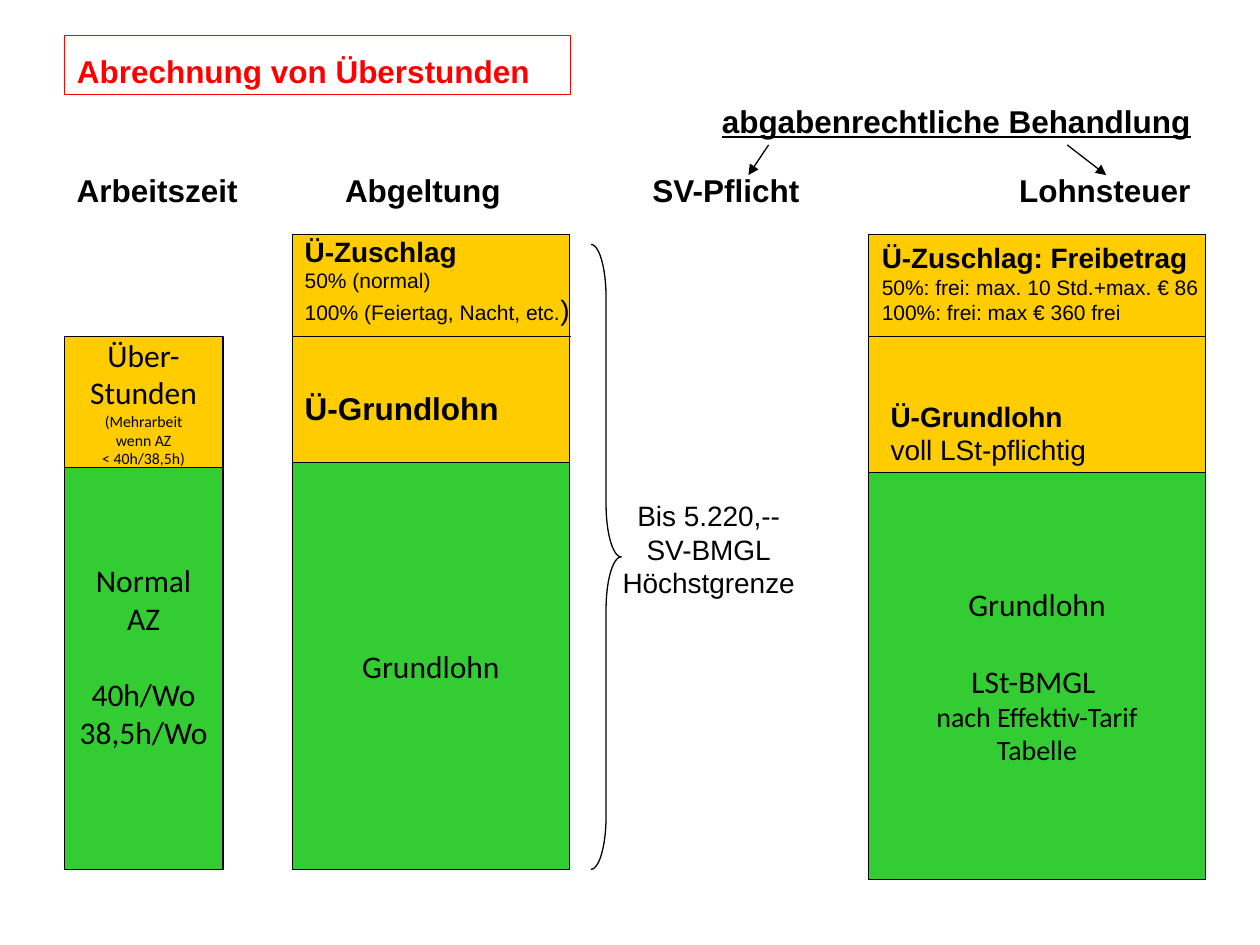
from dataclasses import dataclass
from typing import Optional

from lxml import etree
from pptx import Presentation
from pptx.dml.color import RGBColor
from pptx.enum.shapes import MSO_CONNECTOR as Connector, MSO_SHAPE as Shape
from pptx.enum.text import MSO_ANCHOR as Anchor, MSO_AUTO_SIZE as AutoSize, PP_ALIGN as Align
from pptx.oxml.ns import qn
from pptx.util import Inches, Pt

BLACK, RED, GREEN, GOLD = "000000", "FF0000", "33CC33", "FFCC00"
BLANK_LINE = 22


@dataclass(frozen=True)
class Run:
    text: str
    size: float = 18
    bold: bool = False
    underline: bool = False
    color: str = BLACK


@dataclass(frozen=True)
class Line:
    runs: tuple[Run, ...]
    before: float = 0


@dataclass(frozen=True)
class Area:
    left: float
    top: float
    width: float
    height: float

    def lengths(self):
        return [Inches(v) for v in (self.left, self.top, self.width, self.height)]


@dataclass(frozen=True)
class Block:
    area: Area
    fill: Optional[str] = None
    lines: tuple[Line, ...] = ()
    border: str = BLACK


@dataclass(frozen=True)
class Label:
    area: Area
    lines: tuple[Line, ...]
    wrap: bool = False
    align: Align = Align.LEFT


@dataclass(frozen=True)
class Stroke:
    start: tuple[float, float]
    end: tuple[float, float]
    arrow: bool = False


def line(text: str, size: float = 18, before: float = 0, **style) -> Line:
    return Line((Run(text, size, **style),), before)


def heading(text: str, left: float, top: float, width: float, **style) -> Label:
    return Label(Area(left, top, width, 0.4), (line(text, bold=True, **style),), wrap=True)


def rgb(value: str) -> RGBColor:
    return RGBColor.from_string(value)


def outline(shape, color: str) -> None:
    shape.line.color.rgb = rgb(color)
    shape.line.width = Pt(0.75)


def write(frame, lines: tuple[Line, ...], font: str, align: Align) -> None:
    for index, content in enumerate(lines):
        paragraph = frame.add_paragraph() if index else frame.paragraphs[0]
        paragraph.alignment = align
        paragraph.space_before = Pt(content.before)
        for part in content.runs:
            run = paragraph.add_run()
            run.text = part.text
            run.font.name = font
            run.font.size = Pt(part.size)
            run.font.bold = part.bold
            run.font.underline = part.underline
            run.font.color.rgb = rgb(part.color)


def fill_label(box, label: Label) -> None:
    box.left, box.top, box.width, box.height = label.area.lengths()
    frame = box.text_frame
    frame.word_wrap = label.wrap
    frame.auto_size = AutoSize.SHAPE_TO_FIT_TEXT
    frame.vertical_anchor = Anchor.TOP
    write(frame, label.lines, "Arial", label.align)


def draw_label(slide, label: Label) -> None:
    fill_label(slide.shapes.add_textbox(*label.area.lengths()), label)


def draw_block(slide, block: Block) -> None:
    box = slide.shapes.add_shape(Shape.RECTANGLE, *block.area.lengths())
    box.shadow.inherit = False
    outline(box, block.border)
    if block.fill:
        box.fill.solid()
        box.fill.fore_color.rgb = rgb(block.fill)
    else:
        box.fill.background()
    box.text_frame.word_wrap = False
    box.text_frame.vertical_anchor = Anchor.MIDDLE
    write(box.text_frame, block.lines, "Calibri", Align.CENTER)


def draw_brace(slide, area: Area) -> None:
    brace = slide.shapes.add_shape(Shape.RIGHT_BRACE, *area.lengths())
    brace.shadow.inherit = False
    brace.fill.background()
    outline(brace, BLACK)
    brace.adjustments[0] = 1.75
    brace.adjustments[1] = 0.5


def draw_stroke(slide, stroke: Stroke) -> None:
    ends = [Inches(v) for v in stroke.start + stroke.end]
    connector = slide.shapes.add_connector(Connector.STRAIGHT, *ends)
    outline(connector, BLACK)
    properties = connector._element.spPr
    if stroke.arrow:
        etree.SubElement(properties.find(qn("a:ln")), qn("a:tailEnd"), type="triangle")
    etree.SubElement(properties, qn("a:effectLst"))


WORK, PAY, TAX = 0.51, 2.32, 6.89
SURCHARGE_TOP, OVERTIME_TOP = 1.86, 2.67
HEADING_TOP = 1.31

TITLE = Label(Area(WORK, 0.36, 3.8, 0.4),
              (line("Abrechnung von Überstunden", bold=True, color=RED),))

BLOCKS = [
    Block(Area(WORK, 0.28, 4.02, 0.47), border=RED),
    Block(Area(WORK, 3.51, 1.26, 3.39), GREEN, (
        line("Normal"), line("AZ"),
        line("40h/Wo", before=BLANK_LINE), line("38,5h/Wo"))),
    Block(Area(WORK, OVERTIME_TOP, 1.26, 1.04), GOLD, (
        line("Über-"), line("Stunden"), line("(Mehrarbeit", 9),
        line("wenn AZ", 9), line("< 40h/38,5h)", 9))),
    Block(Area(PAY, 3.67, 2.2, 3.23), GREEN, (line("Grundlohn"),)),
    Block(Area(PAY, SURCHARGE_TOP, 2.2, 1.81), GOLD),
    Block(Area(TAX, 3.75, 2.68, 3.23), GREEN, (
        line("Grundlohn"), line("LSt-BMGL ", before=BLANK_LINE),
        line("nach Effektiv-Tarif", 16), line("Tabelle", 16))),
    Block(Area(TAX, SURCHARGE_TOP, 2.68, 1.89), GOLD),
]

LABELS = [
    heading("Arbeitszeit", WORK, HEADING_TOP, 1.48),
    heading("Abgeltung", 2.64, HEADING_TOP, 1.5),
    heading("SV-Pflicht", 5.08, HEADING_TOP, 1.5),
    heading("Lohnsteuer", 7.99, HEADING_TOP, 1.77),
    heading("abgabenrechtliche Behandlung", 5.63, 0.76, 4.02, underline=True),
    Label(Area(PAY, 1.81, 2.33, 0.84), (
        line("Ü-Zuschlag", 16, bold=True), line("50% (normal)", 12),
        Line((Run("100% (Feiertag, Nacht, etc.", 12), Run(")", 16))))),
    Label(Area(PAY, 3.04, 1.74, 0.4), (line("Ü-Grundlohn", bold=True),)),
    Label(Area(4.84, 3.91, 1.57, 0.9), (
        line("Bis 5.220,--", 16), line("SV-BMGL", 16),
        line("Höchstgrenze", 16)), align=Align.CENTER),
    Label(Area(6.9, SURCHARGE_TOP, 2.77, 0.77), (
        line("Ü-Zuschlag: Freibetrag", 16, bold=True),
        line("50%: frei: max. 10 Std.+max. € 86", 12),
        line("100%: frei: max € 360 frei", 12))),
    Label(Area(6.97, 3.12, 1.76, 0.64), (
        line("Ü-Grundlohn", 16, bold=True), line("voll LSt-pflichtig", 16))),
]

STROKES = [
    Stroke((PAY, OVERTIME_TOP), (4.53, OVERTIME_TOP)),
    Stroke((TAX, OVERTIME_TOP), (9.57, OVERTIME_TOP)),
    Stroke((6.1, 1.15), (5.94, 1.39), arrow=True),
    Stroke((8.47, 1.15), (8.78, 1.39), arrow=True),
]


def main() -> None:
    deck = Presentation()
    deck.slide_width, deck.slide_height = Inches(10), Inches(7.5)
    slide = deck.slides.add_slide(deck.slide_layouts[5])
    fill_label(slide.shapes.title, TITLE)
    for block in BLOCKS:
        draw_block(slide, block)
    draw_brace(slide, Area(4.69, 1.94, 0.24, 4.96))
    for stroke in STROKES:
        draw_stroke(slide, stroke)
    for label in LABELS:
        draw_label(slide, label)
    deck.save("out.pptx")


if __name__ == "__main__":
    main()
